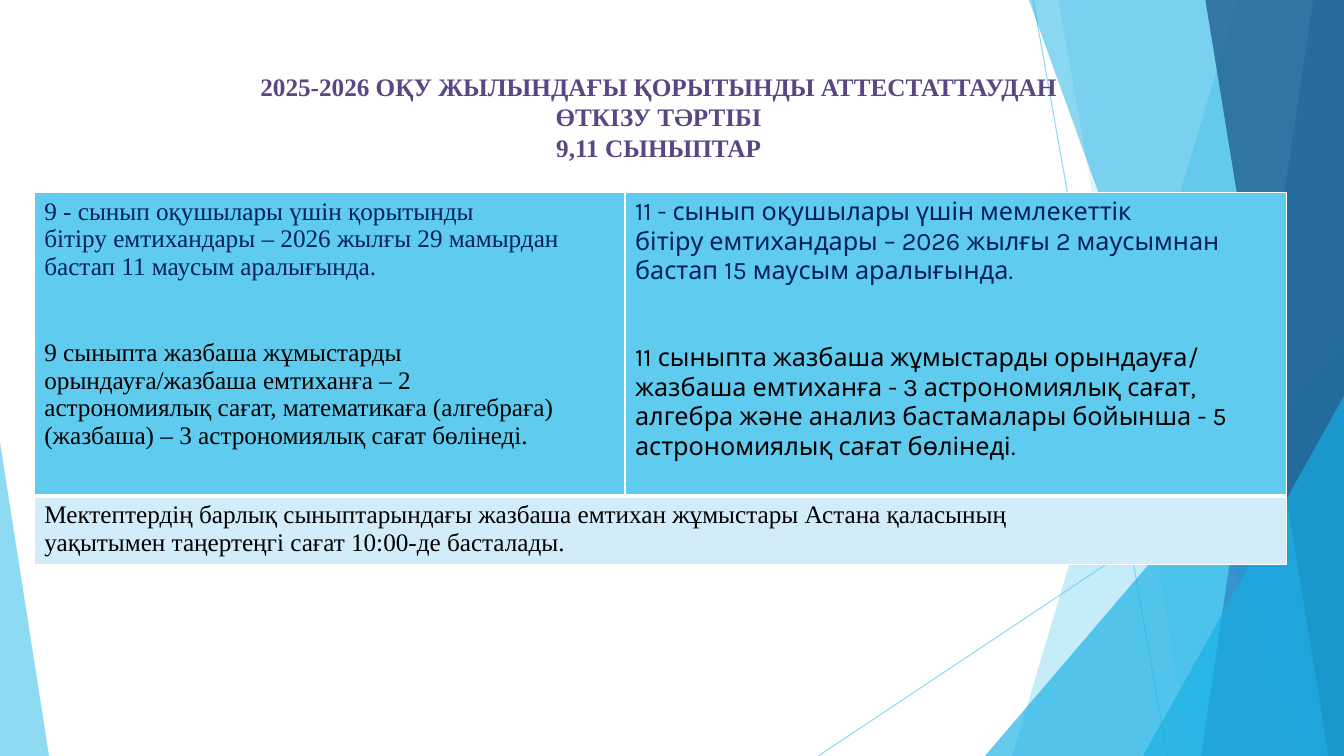
from dataclasses import dataclass

from lxml import etree
from pptx import Presentation
from pptx.dml.color import RGBColor as RGB
from pptx.enum.shapes import MSO_CONNECTOR as CONN, MSO_SHAPE as SHAPE
from pptx.enum.text import MSO_ANCHOR as ANCHOR, MSO_AUTO_SIZE as AUTO, PP_ALIGN as ALIGN
from pptx.oxml.ns import qn
from pptx.util import Pt


@dataclass(frozen=True)
class Theme:
    sky: str = "5FCBEF"
    azure: str = "17B0E4"
    blue: str = "2E83C3"
    deep: str = "226292"
    pale: str = "D2ECF9"
    white: str = "FFFFFF"
    black: str = "000000"
    navy: str = "002060"
    violet: str = "594683"
    serif: str = "Times New Roman"
    sans: str = "Karla"
    size: int = 18


WIDTH, HEIGHT = 960, 540
TITLE = ("2025-2026 ОҚУ ЖЫЛЫНДАҒЫ ҚОРЫТЫНДЫ АТТЕСТАТТАУДАН",
         "ӨТКІЗУ ТӘРТІБІ",
         "9,11 СЫНЫПТАР")
GRADE_9_DATES = ("9 - сынып оқушылары үшін қорытынды",
                 "бітіру емтихандары – 2026 жылғы 29 мамырдан",
                 "бастап 11 маусым аралығында.")
GRADE_9_HOURS = ("9 сыныпта жазбаша жұмыстарды",
                 "орындауға/жазбаша емтиханға – 2",
                 "астрономиялық сағат, математикаға (алгебраға)",
                 "(жазбаша) – 3 астрономиялық сағат бөлінеді.")
GRADE_11_DATES = ("11 - сынып оқушылары үшін мемлекеттік",
                  "бітіру емтихандары – 2026 жылғы 2 маусымнан бастап 15 маусым аралығында.")
GRADE_11_HOURS = ("11 сыныпта жазбаша жұмыстарды орындауға/",
                  "жазбаша емтиханға - 3 астрономиялық сағат,",
                  "алгебра және анализ бастамалары бойынша - 5",
                  "астрономиялық сағат бөлінеді.")
START_TIME = ("Мектептердің барлық сыныптарындағы жазбаша емтихан жұмыстары Астана қаласының",
              "уақытымен таңертеңгі сағат 10:00-де басталады.")


class Deck:
    def __init__(self, theme):
        self.theme = theme
        self.prs = Presentation()
        self.prs.slide_width, self.prs.slide_height = Pt(WIDTH), Pt(HEIGHT)
        self.s = self.prs.slides.add_slide(self.prs.slide_layouts[5])

    def set_alpha(self, element, percent):
        color = next(element.iter(qn("a:srgbClr")))
        etree.SubElement(color, qn("a:alpha"), val=str(percent * 1000))

    def paint(self, sp, color, alpha):
        sp.shadow.inherit = False
        sp.fill.solid()
        sp.fill.fore_color.rgb = RGB.from_string(color)
        sp.line.fill.background()
        self.set_alpha(sp._element.spPr, alpha)

    def line(self, x1, y1, x2, y2):
        c = self.s.shapes.add_connector(CONN.STRAIGHT, Pt(x1), Pt(y1), Pt(x2), Pt(y2))
        c.line.width = Pt(0.75)
        c.line.color.rgb = RGB.from_string(self.theme.sky)
        spPr = c._element.spPr
        self.set_alpha(spPr, 70)
        etree.SubElement(spPr, qn("a:effectLst"))

    def band(self, top_x, bottom_x, color, alpha):
        """Full-height shape from a slanted left edge to the slide's right edge."""
        fb = self.s.shapes.build_freeform(top_x, 0, scale=Pt(1))
        fb.add_line_segments([(WIDTH, 0), (WIDTH, HEIGHT), (bottom_x, HEIGHT)])
        self.paint(fb.convert_to_shape(), color, alpha)

    def triangle(self, x, y, width, apex, color, alpha):
        """Triangle standing on the slide's bottom edge."""
        sp = self.s.shapes.add_shape(SHAPE.ISOSCELES_TRIANGLE,
                                     Pt(x), Pt(y), Pt(width), Pt(HEIGHT - y))
        sp.adjustments[0] = apex
        self.paint(sp, color, alpha)

    def set_font(self, p, name, color, bold=False):
        p.font.name, p.font.size, p.font.bold = name, Pt(self.theme.size), bold
        p.font.color.rgb = RGB.from_string(color)

    def title(self, lines, x, y, width, height):
        sp = self.s.shapes.title
        self.s.shapes._spTree.append(sp._element)  # in front of the bands
        sp.left, sp.top, sp.width, sp.height = Pt(x), Pt(y), Pt(width), Pt(height)
        tf = sp.text_frame
        tf.auto_size, tf.vertical_anchor, tf.word_wrap = AUTO.NONE, ANCHOR.TOP, True
        p = tf.paragraphs[0]
        p.text = "\v".join(lines)
        p.alignment = ALIGN.CENTER
        self.set_font(p, self.theme.serif, self.theme.violet, bold=True)

    def table(self, x, y, columns, rows):
        tbl = self.s.shapes.add_table(len(rows), len(columns), Pt(x), Pt(y),
                                      Pt(sum(columns)), Pt(sum(rows))).table
        tbl.first_row = tbl.horz_banding = False
        for column, width in zip(tbl.columns, columns):
            column.width = Pt(width)
        for row, height in zip(tbl.rows, rows):
            row.height = Pt(height)
        return tbl

    def cell(self, cell, fill, font, groups, top=1, bottom=1):
        """Fill a cell with groups of (colour, lines), set apart by a gap."""
        tf = cell.text_frame
        p = None
        for color, lines in groups:
            for i, text in enumerate(lines):
                first = p is None
                p = tf.paragraphs[0] if first else tf.add_paragraph()
                p.text = text
                if i == 0 and not first:
                    p.space_before = Pt(41)
                self.set_font(p, font, color)
        tcPr = cell._tc.get_or_add_tcPr()
        for side, width in (("L", 1), ("R", 1), ("T", top), ("B", bottom)):
            ln = etree.SubElement(tcPr, qn(f"a:ln{side}"), w=str(Pt(width)))
            solid = etree.SubElement(ln, qn("a:solidFill"))
            etree.SubElement(solid, qn("a:srgbClr"), val=self.theme.white)
        cell.fill.solid()
        cell.fill.fore_color.rgb = RGB.from_string(fill)


def main():
    t = Theme()
    deck = Deck(t)

    deck.line(738, 0, 834, HEIGHT)
    deck.line(WIDTH, 290, 584.5, HEIGHT)
    deck.band(884, 723, t.sky, 36)
    deck.band(756, 851, t.sky, 20)
    deck.triangle(703.5, 240, 256.5, 1, t.azure, 66)
    deck.band(735, 929.5, t.azure, 50)
    deck.band(938, 858, t.blue, 70)
    deck.band(861, 949, t.deep, 80)
    deck.triangle(816.5, 283, 143.5, 1, t.azure, 66)
    deck.triangle(0, 316, 35, 0, t.sky, 70)

    deck.title(TITLE, 49, 47.5, 843, 104)

    tbl = deck.table(24.5, 137.5, columns=(422, 472.5), rows=(217, 49))
    grades = ((t.serif, GRADE_9_DATES, GRADE_9_HOURS),
              (t.sans, GRADE_11_DATES, GRADE_11_HOURS))
    for col, (font, dates, hours) in enumerate(grades):
        deck.cell(tbl.cell(0, col), t.sky, font,
                  ((t.navy, dates), (t.black, hours)), bottom=3)
    tbl.cell(1, 0).merge(tbl.cell(1, 1))
    deck.cell(tbl.cell(1, 0), t.pale, t.serif, ((t.black, START_TIME),), top=3)
    deck.cell(tbl.cell(1, 1), t.pale, t.serif, (), top=3)

    deck.prs.save("out.pptx")


if __name__ == "__main__":
    main()
